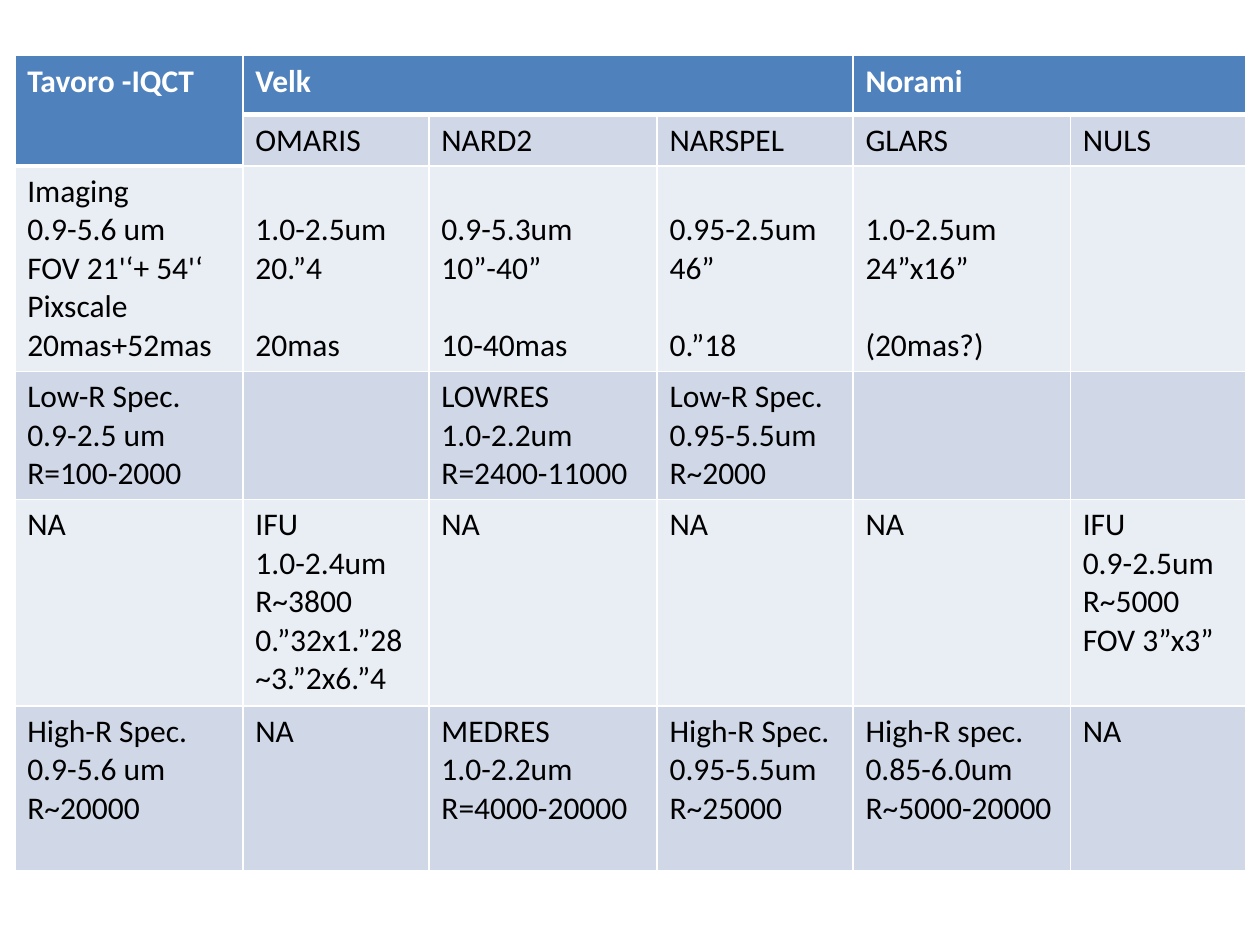
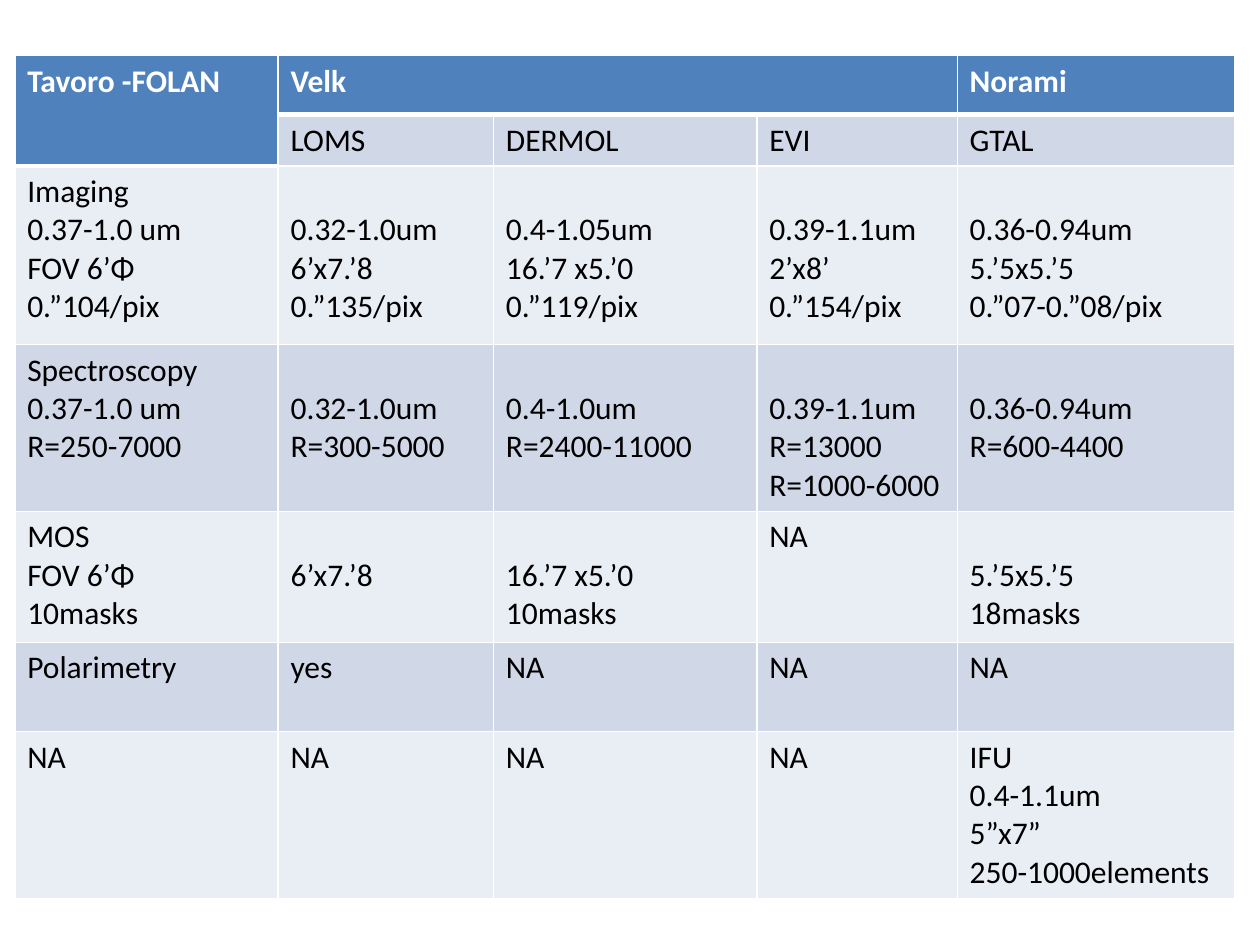
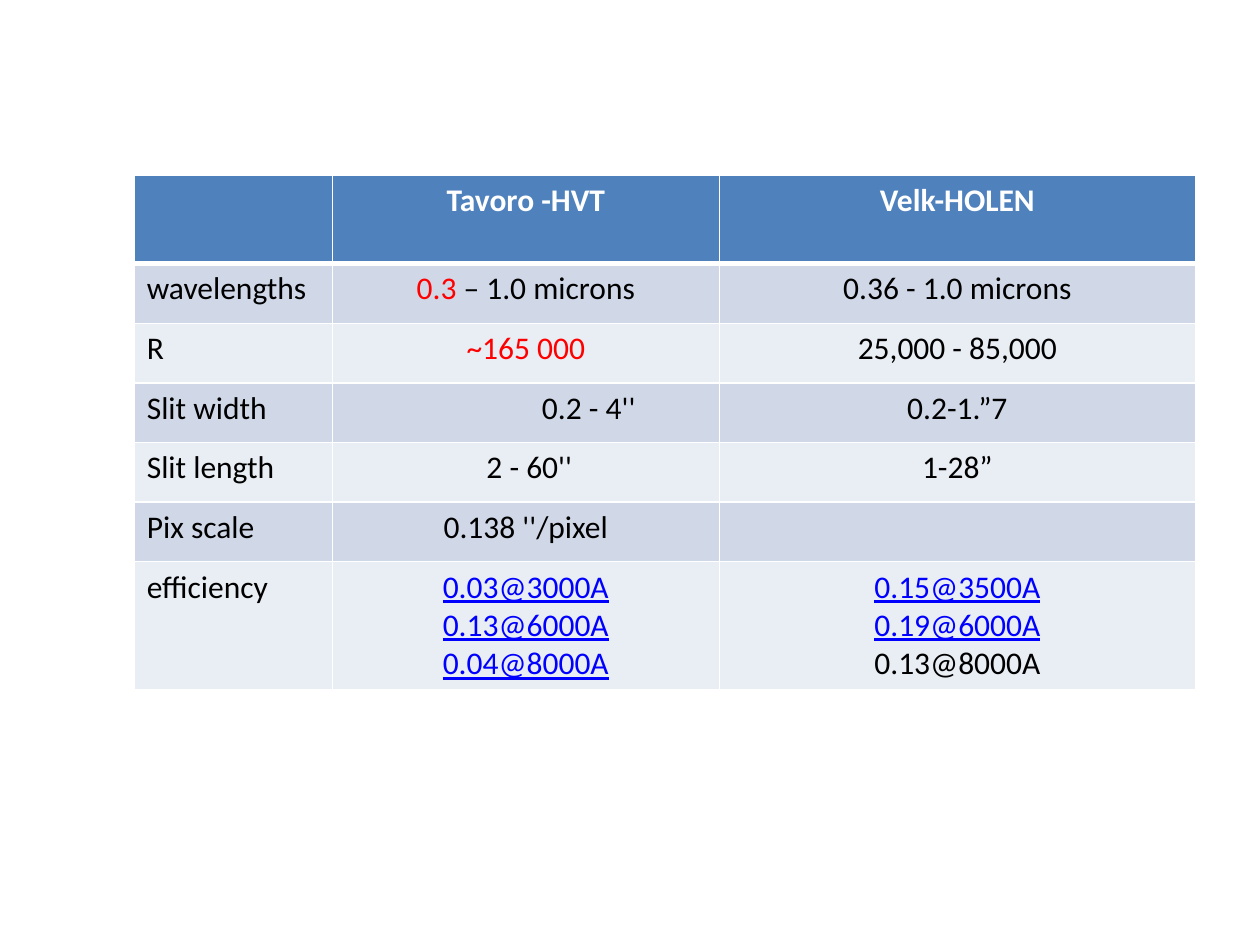
from dataclasses import dataclass

from lxml import etree
from pptx import Presentation
from pptx.dml.color import RGBColor
from pptx.enum.text import PP_ALIGN
from pptx.oxml.ns import qn
from pptx.util import Cm, Pt

LEFT, CENTER = PP_ALIGN.LEFT, PP_ALIGN.CENTER


@dataclass(frozen=True)
class Theme:
    font: str = "Calibri"
    size: int = 18
    line_height: int = 22
    head_fill: str = "4F81BD"
    bands: tuple = ("E9EDF4", "D0D8E8")
    head_text: str = "FFFFFF"
    text: str = "000000"
    alert: str = "FF0000"
    link: str = "0000FF"
    border: str = "FFFFFF"
    thin: int = 1
    thick: int = 3
    side_margin: float = 0.25
    top_margin: float = 0.13


THEME = Theme()

# A cell is plain text, or a list of lines made of (text, tone) runs.
# An empty line in plain text leaves a gap of one line.
INFRARED = {
    "at": (0.3, 1.12),
    "columns": [4.6, 3.75, 4.6, 3.95, 4.38, 3.53],
    "heights": [1.19, 1.01, 4.13, 2.58, 4.16, 3.33],
    "merges": [((0, 0), (1, 0)), ((0, 1), (0, 3)), ((0, 4), (0, 5))],
    "rows": [
        ["Tavoro -IQCT", "Velk", "", "", "Norami", ""],
        ["", "OMARIS", "NARD2", "NARSPEL", "GLARS", "NULS"],
        ["Imaging\n0.9-5.6 um\nFOV 21'‘+ 54'‘\nPixscale 20mas+52mas",
         "\n1.0-2.5um\n20.”4\n\n20mas",
         "\n0.9-5.3um\n10”-40”\n\n10-40mas",
         "\n0.95-2.5um\n46”\n\n0.”18",
         "\n1.0-2.5um\n24”x16”\n\n(20mas?)", ""],
        ["Low-R Spec.\n0.9-2.5 um\nR=100-2000", "",
         "LOWRES\n1.0-2.2um\nR=2400-11000",
         "Low-R Spec.\n0.95-5.5um\nR~2000", "", ""],
        ["NA", "IFU\n1.0-2.4um\nR~3800\n0.”32x1.”28\n~3.”2x6.”4",
         "NA", "NA", "NA", "IFU\n0.9-2.5um\nR~5000\nFOV 3”x3”"],
        ["High-R Spec.\n0.9-5.6 um\nR~20000", "NA",
         "MEDRES\n1.0-2.2um\nR=4000-20000",
         "High-R Spec.\n0.95-5.5um\nR~25000",
         "High-R spec.\n0.85-6.0um\nR~5000-20000", "NA"],
    ],
}

OPTICAL = {
    "at": (0.3, 1.12),
    "columns": [5.31, 4.34, 5.31, 4.04, 5.59],
    "heights": [1.19, 1.01, 3.6, 3.35, 2.64, 1.8, 3.33],
    "merges": [((0, 0), (1, 0)), ((0, 1), (0, 3))],
    "rows": [
        ["Tavoro -FOLAN", "Velk", "", "", "Norami"],
        ["", "LOMS", "DERMOL", "EVI", "GTAL"],
        ["Imaging\n0.37-1.0 um\nFOV 6’Φ\n0.”104/pix",
         "\n0.32-1.0um\n6’x7.’8\n0.”135/pix",
         "\n0.4-1.05um\n16.’7 x5.’0 0.”119/pix",
         "\n0.39-1.1um\n2’x8’\n0.”154/pix",
         "\n0.36-0.94um\n5.’5x5.’5\n0.”07-0.”08/pix"],
        ["Spectroscopy\n0.37-1.0 um\nR=250-7000",
         "\n0.32-1.0um\nR=300-5000",
         "\n0.4-1.0um\nR=2400-11000",
         "\n0.39-1.1um\nR=13000\nR=1000-6000",
         "\n0.36-0.94um\nR=600-4400"],
        ["MOS\nFOV 6’Φ\n10masks", "\n6’x7.’8", "\n16.’7 x5.’0\n10masks",
         "NA", "\n5.’5x5.’5\n18masks"],
        ["Polarimetry", "yes", "NA", "NA", "NA"],
        ["NA", "NA", "NA", "NA", "IFU\n0.4-1.1um\n5”x7”\n250-1000elements"],
    ],
}

HIGH_RESOLUTION = {
    "at": (2.71, 3.53),
    "columns": [3.99, 7.8, 9.6],
    "heights": [1.78, 1.21, 1.2, 1.2, 1.2, 1.2, 2.59],
    "centered": True,
    "indents": {(3, 1): 2.54, (4, 1): 0.14},
    "rows": [
        ["", "Tavoro -HVT", "Velk-HOLEN"],
        ["wavelengths", [[("0.3", "alert"), (" – 1.0 microns", "text")]],
         "0.36 - 1.0 microns"],
        ["R", [[("~165 000", "alert")]], "25,000 - 85,000"],
        ["Slit width", "0.2 - 4''", "0.2-1.”7"],
        ["Slit length", "2 - 60''", "1-28”"],
        ["Pix scale", "0.138 ''/pixel", ""],
        ["efficiency",
         [[("0.03@3000A", "link")], [("0.13@6000A", "link")],
          [("0.04@8000A", "link")]],
         [[("0.15@3500A", "link")], [("0.19@6000A", "link")],
          [("0.13@8000A", "text")]]],
    ],
}


def set_borders(cell, top, bottom):
    """Draw the four sides; top and bottom are widths in points."""
    properties = cell._tc.get_or_add_tcPr()
    widths = {"L": THEME.thin, "R": THEME.thin, "T": top, "B": bottom}
    for side, width in widths.items():
        line = etree.SubElement(properties, qn(f"a:ln{side}"), w=str(Pt(width)))
        fill = etree.SubElement(line, qn("a:solidFill"))
        etree.SubElement(fill, qn("a:srgbClr"), val=THEME.border)


def write_cell(cell, content, is_head, align, indent):
    """Write the lines of a cell, turning empty lines into spacing."""
    tone = "head_text" if is_head else "text"
    if isinstance(content, str):
        content = [[(line, tone)] if line else [] for line in content.split("\n")]
    cell.margin_left = Cm(THEME.side_margin + indent)
    cell.margin_right = Cm(THEME.side_margin)
    cell.margin_top = cell.margin_bottom = Cm(THEME.top_margin)

    frame = cell.text_frame
    frame.paragraphs[0].font.size = Pt(THEME.size)
    started, gap = False, 0
    for line in content:
        if not line:
            gap += THEME.line_height
            continue
        if started:
            para = frame.add_paragraph()
            para.space_before = Pt(gap)
        else:
            para = frame.paragraphs[0]
            cell.margin_top = Cm(THEME.top_margin) + Pt(gap)
        started, gap = True, 0
        para.alignment = align
        for text, tone in line:
            span = para.add_run()
            span.text = text
            span.font.name = THEME.font
            span.font.size = Pt(THEME.size)
            span.font.bold = is_head
            span.font.underline = tone == "link"
            span.font.color.rgb = RGBColor.from_string(getattr(THEME, tone))


def add_comparison(page, comparison):
    columns, heights = comparison["columns"], comparison["heights"]
    left, top = comparison["at"]
    table = page.shapes.add_table(
        len(heights), len(columns), Cm(left), Cm(top),
        Cm(sum(columns)), Cm(sum(heights))).table
    for column, width in zip(table.columns, columns):
        column.width = Cm(width)
    for row, height in zip(table.rows, heights):
        row.height = Cm(height)
    for first, last in comparison.get("merges", []):
        table.cell(*first).merge(table.cell(*last))

    def in_head(row, column):
        return row == 0 or table.cell(row, column).is_spanned

    for r, contents in enumerate(comparison["rows"]):
        for c, content in enumerate(contents):
            cell = table.cell(r, c)
            is_head = in_head(r, c)
            below_head = r > 0 and not is_head and in_head(r - 1, c)
            set_borders(cell, THEME.thick if below_head else THEME.thin,
                        THEME.thick if is_head else THEME.thin)
            cell.fill.solid()
            cell.fill.fore_color.rgb = RGBColor.from_string(
                THEME.head_fill if is_head else THEME.bands[r % 2])
            align = CENTER if comparison.get("centered") and c else LEFT
            indent = comparison.get("indents", {}).get((r, c), 0)
            if not cell.is_spanned:
                write_cell(cell, content, is_head, align, indent)


def main():
    deck = Presentation()
    deck.slide_width, deck.slide_height = Cm(25.4), Cm(19.05)
    for comparison in (INFRARED, OPTICAL, HIGH_RESOLUTION):
        page = deck.slides.add_slide(deck.slide_layouts[6])
        add_comparison(page, comparison)
    deck.save("out.pptx")


if __name__ == "__main__":
    main()
